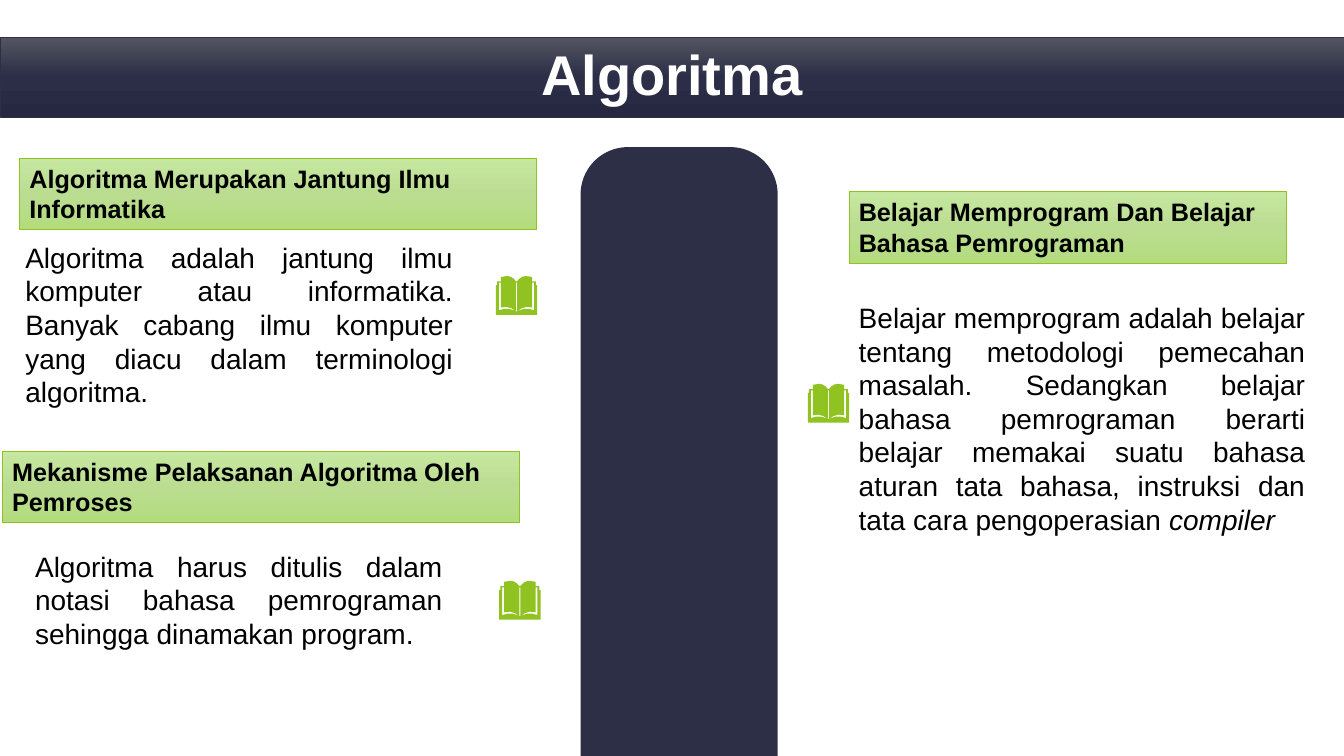
"""Build a slide on algorithms with headed paragraphs around a dark centre column."""
import copy

import pptx
import pptx.dml.color
import pptx.enum.shapes
import pptx.enum.text
import pptx.oxml.ns
import pptx.util

Pt = pptx.util.Pt
RGBColor = pptx.dml.color.RGBColor
Align = pptx.enum.text.PP_ALIGN
Anchor = pptx.enum.text.MSO_ANCHOR

WHITE = RGBColor(0xFF, 0xFF, 0xFF)
BLACK = RGBColor(0x00, 0x00, 0x00)
NAVY = RGBColor(0x2C, 0x2F, 0x45)
LIME = RGBColor(0x90, 0xC2, 0x21)
NAVY_FADE = (RGBColor(0x54, 0x55, 0x61), RGBColor(0x2B, 0x2E, 0x46), RGBColor(0x25, 0x28, 0x40))
LIME_FADE = (RGBColor(0xC6, 0xE7, 0x9F), RGBColor(0xBB, 0xDD, 0x92), RGBColor(0xB3, 0xDC, 0x7D))

BOOK_WIDTH = 410
COVER_HALF = [(200, 52), (175, 25), (145, 6), (110, 0), (50, 10), (50, 52), (12, 52),
              (12, 90), (0, 90), (0, 385)]
PAGE_EDGE = [(200, 350), (155, 320), (105, 306), (50, 312), (50, 65), (30, 65),
             (30, 340), (85, 325), (130, 325), (165, 336)]
SPINE = [(200, 65), (210, 65), (210, 350), (200, 350)]

SECTIONS = [
    ("Algoritma Merupakan Jantung Ilmu Informatika", (13.9, 113, 369.6, 50.9),
     ["Algoritma adalah jantung ilmu komputer atau informatika. Banyak cabang ilmu "
      "komputer yang diacu dalam terminologi algoritma."],
     (11, 168, 319.7, 128.2), (354.2, 197.2)),
    ("Mekanisme Pelaksanan Algoritma Oleh Pemroses", (1.6, 322.4, 369.6, 50.9),
     ["Algoritma harus ditulis dalam notasi bahasa pemrograman sehingga dinamakan program."],
     (18, 388.8, 305.3, 79.9), (356.6, 414.9)),
    ("Belajar Memprogram Dan Belajar Bahasa Pemrograman", (606.4, 136.9, 312.5, 50.9),
     ["Belajar memprogram adalah belajar tentang metodologi pemecahan masalah. Sedangkan "
      "belajar bahasa pemrograman berarti belajar memakai suatu bahasa aturan tata bahasa, "
      "instruksi dan tata cara pengoperasian ", "compiler"],
     (606.3, 211.1, 333.2, 177.1), (577, 274.2)),
]


def mirrored(points):
    return [(BOOK_WIDTH - x, y) for x, y in reversed(points)]


class SlideStyle:
    font = "Arial"
    title_size = 40
    heading_size = 18
    body_size = 20

    def __init__(self, page):
        self.page = page

    def format_run(self, span, size, color, bold=False):
        span.font.name = self.font
        span.font.size = Pt(size)
        span.font.bold = bold
        span.font.color.rgb = color

    def shade(self, shape, colors, line_color):
        shape.fill.gradient()
        shape.fill.gradient_angle = 270
        stops = shape._element.spPr.find(".//" + pptx.oxml.ns.qn("a:gsLst"))
        stops.append(copy.deepcopy(stops[-1]))
        for index, (stop, color) in enumerate(zip(shape.fill.gradient_stops, colors)):
            stop.position = index / 2
            stop.color.rgb = color
        shape.line.color.rgb = line_color
        shape.line.width = Pt(0.5)

    def solid(self, shape, color):
        shape.shadow.inherit = False
        shape.fill.solid()
        shape.fill.fore_color.rgb = color
        shape.line.fill.background()

    def title(self, text, place):
        box = self.page.shapes.title
        box.left, box.top, box.width, box.height = map(Pt, place)
        self.shade(box, NAVY_FADE, NAVY)
        frame = box.text_frame
        frame.text = text
        frame.auto_size = pptx.enum.text.MSO_AUTO_SIZE.NONE
        frame.vertical_anchor = Anchor.MIDDLE
        para = frame.paragraphs[0]
        para.alignment = Align.CENTER
        para.line_spacing = 0.9
        para.space_before = Pt(10)
        self.format_run(para.runs[0], self.title_size, WHITE, bold=True)

    def column(self, place):
        kind = pptx.enum.shapes.MSO_SHAPE.ROUND_2_SAME_RECTANGLE
        shape = self.page.shapes.add_shape(kind, *map(Pt, place))
        shape.adjustments[0] = 0.24
        self.solid(shape, NAVY)

    def heading(self, text, place):
        kind = pptx.enum.shapes.MSO_SHAPE.RECTANGLE
        shape = self.page.shapes.add_shape(kind, *map(Pt, place))
        shape.shadow.inherit = False
        self.shade(shape, LIME_FADE, LIME)
        shape.text_frame.text = text
        shape.text_frame.vertical_anchor = Anchor.TOP
        para = shape.text_frame.paragraphs[0]
        para.alignment = Align.LEFT
        self.format_run(para.runs[0], self.heading_size, BLACK, bold=True)

    def paragraph(self, pieces, place):
        box = self.page.shapes.add_textbox(*map(Pt, place))
        box.text_frame.word_wrap = True
        para = box.text_frame.paragraphs[0]
        para.alignment = Align.JUSTIFY
        for index, piece in enumerate(pieces):
            span = para.add_run()
            span.text = piece
            self.format_run(span, self.body_size, BLACK)
            span.font.italic = index > 0

    def book(self, left, top):
        cover = COVER_HALF + mirrored(COVER_HALF)
        builder = self.page.shapes.build_freeform(*cover[0], scale=Pt(72) / 1000)
        builder.add_line_segments(cover[1:])
        for opening in (PAGE_EDGE, mirrored(PAGE_EDGE), SPINE):
            builder.move_to(*opening[0])
            builder.add_line_segments(opening[1:])
        self.solid(builder.convert_to_shape(Pt(left), Pt(top)), LIME)


def main():
    deck = pptx.Presentation()
    deck.slide_width, deck.slide_height = Pt(960), Pt(540)
    style = SlideStyle(deck.slides.add_slide(deck.slide_layouts[5]))
    style.title("Algoritma", (0, 26.6, 960, 57.3))
    style.column((414.7, 105.1, 140.8, 434.9))
    for heading, heading_place, pieces, text_place, book_place in SECTIONS:
        style.heading(heading, heading_place)
        style.paragraph(pieces, text_place)
        style.book(*book_place)
    deck.save("out.pptx")


if __name__ == "__main__":
    main()
